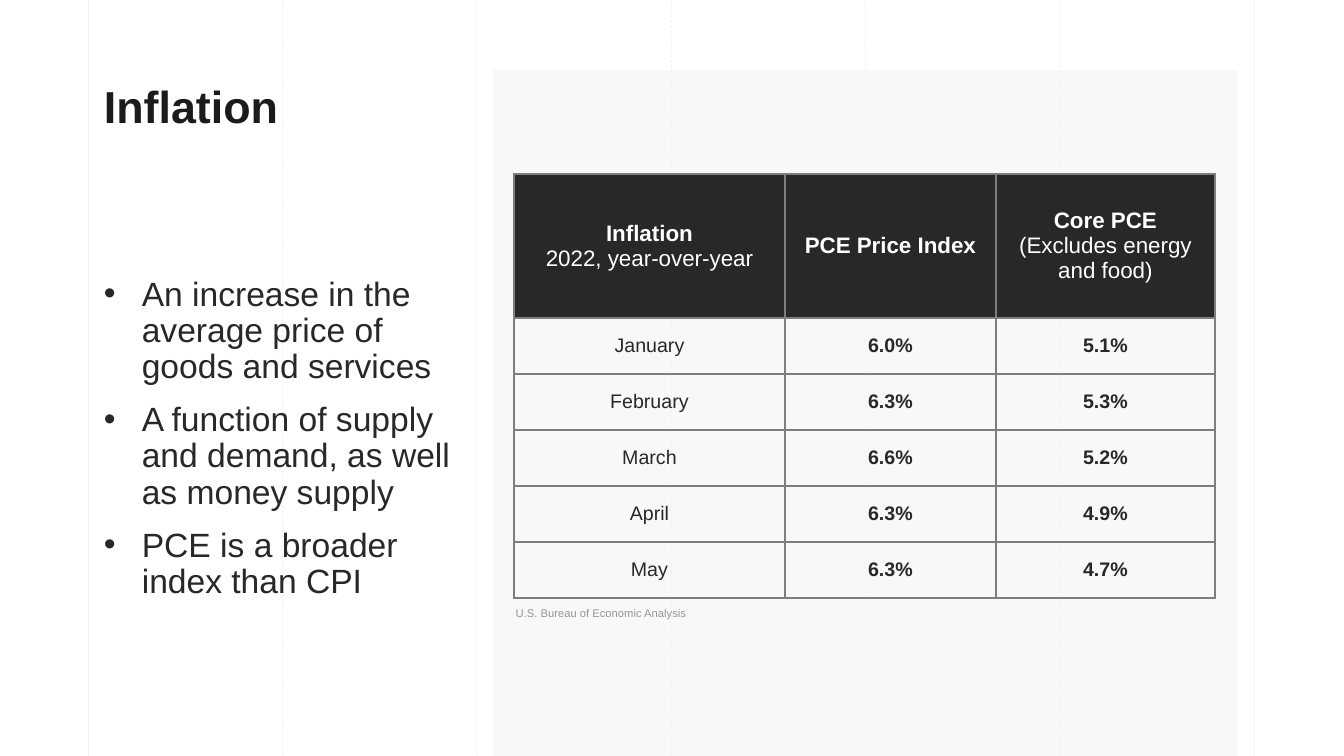
from lxml import etree
from pptx import Presentation, util as u
from pptx.dml.color import RGBColor
from pptx.enum import dml, shapes, text
from pptx.oxml import parse_xml
from pptx.oxml.ns import nsdecls, qn

PX = 914400 / 100.8
WIDTH, HEIGHT = 1344, 756
PALE = RGBColor(0xF2, 0xF2, 0xF2)
TITLE_INK = RGBColor(0x1C, 0x1B, 0x1C)
INK = RGBColor(0x28, 0x28, 0x28)
WHITE = RGBColor(0xFF, 0xFF, 0xFF)
BORDER = RGBColor(0x7E, 0x7E, 0x7E)
SOURCE_GREY = RGBColor(0x96, 0x96, 0x96)


def px(*lengths):
    """Turn pixel lengths into EMU."""
    return [u.Emu(round(length * PX)) for length in lengths]


def add_text(box, lines, size, color, bold=False):
    """Add a text box without insets, one paragraph per line."""
    frame = slide.shapes.add_textbox(*px(*box)).text_frame
    frame.word_wrap = True
    frame.margin_left = frame.margin_right = frame.margin_top = frame.margin_bottom = 0
    frame.text = "\n".join(lines)
    for paragraph in frame.paragraphs:
        for run in paragraph.runs:
            run.font.name = "Arial"
            run.font.size = u.Pt(size)
            run.font.bold = bold
            run.font.color.rgb = color
    return frame


presentation = Presentation()
presentation.slide_width, presentation.slide_height = px(WIDTH, HEIGHT)
slide = presentation.slides.add_slide(presentation.slide_layouts[6])

# Vertical guides: solid at both ends, dashed between
for index in range(7):
    x = 88 + index * 1166 // 6
    guide = slide.shapes.add_connector(shapes.MSO_CONNECTOR.STRAIGHT, *px(x, 0, x, HEIGHT))
    guide.line.color.rgb = PALE
    guide.line.width = u.Pt(0.5)
    if 0 < index < 6:
        guide.line.dash_style = dml.MSO_LINE.DASH
    etree.SubElement(guide._element.spPr, qn("a:effectLst"))

# Half-transparent panel behind the table
panel = slide.shapes.add_shape(shapes.MSO_SHAPE.RECTANGLE, *px(493, 70, 745, 686))
panel.shadow.inherit = False
panel.fill.solid()
panel.fill.fore_color.rgb = PALE
panel.line.fill.background()
panel_color = panel._element.spPr.find(qn("a:solidFill"))[0]
etree.SubElement(panel_color, qn("a:alpha"), val="50000")

title = add_text((104, 89, 357, 129), ["Inflation"], 32, TITLE_INK, bold=True)
title.paragraphs[0].line_spacing = 0.8

bullets = add_text((104, 277, 357, 374), [
    "An increase in the average price of goods and services",
    "A function of supply and demand, as well as money supply",
    "PCE is a broader index than CPI",
], 24, INK)
for paragraph in bullets.paragraphs:
    paragraph.line_spacing = 0.9
    paragraph.space_after = u.Pt(12)
    properties = paragraph._p.get_or_add_pPr()
    properties.set("marL", "342900")
    properties.set("indent", "-342900")
    properties.append(parse_xml(f'<a:buFont {nsdecls("a")} typeface="Arial"/>'))
    properties.append(parse_xml(f'<a:buChar {nsdecls("a")} char="•"/>'))

# Price table: \v is a line break within a header, \n a new paragraph
rows = [
    ("Inflation\v2022, year-over-year", "PCE Price Index", "Core PCE\n(Excludes energy and food)"),
    ("January", "6.0%", "5.1%"),
    ("February", "6.3%", "5.3%"),
    ("March", "6.6%", "5.2%"),
    ("April", "6.3%", "4.9%"),
    ("May", "6.3%", "4.7%"),
]
column_widths = px(271, 211, 219)
row_heights = px(144, *[56] * 5)
table = slide.shapes.add_table(
    len(rows), 3, *px(514, 174), sum(column_widths), sum(row_heights)).table
for column, width in zip(table.columns, column_widths):
    column.width = width
for row_index, values in enumerate(rows):
    table.rows[row_index].height = row_heights[row_index]
    header = row_index == 0
    for column_index, value in enumerate(values):
        cell = table.cell(row_index, column_index)
        cell.vertical_anchor = text.MSO_ANCHOR.MIDDLE
        cell.margin_left, cell.margin_right = px(15, 15)
        cell.margin_top, cell.margin_bottom = px(11, 11)
        if header:
            cell.fill.solid()
            cell.fill.fore_color.rgb = INK
        else:
            cell.fill.background()
        cell.text_frame.text = value
        for paragraph in cell.text_frame.paragraphs:
            paragraph.alignment = text.PP_ALIGN.CENTER
        runs = [run for paragraph in cell.text_frame.paragraphs for run in paragraph.runs]
        for run_index, run in enumerate(runs):
            run.font.name = "Arial"
            run.font.size = u.Pt(16 if header else 14)
            run.font.bold = run_index == 0 if header else column_index > 0
            run.font.color.rgb = WHITE if header else INK
        for position, side in enumerate(("lnL", "lnR", "lnT", "lnB")):
            cell._tc.get_or_add_tcPr().insert(position, parse_xml(
                f'<a:{side} {nsdecls("a")} w="12700"><a:solidFill>'
                f'<a:srgbClr val="{BORDER}"/></a:solidFill></a:{side}>'))

source = add_text((508, 606, 186, 13), ["U.S. Bureau of Economic Analysis"], 8, SOURCE_GREY)
source.paragraphs[0].alignment = text.PP_ALIGN.CENTER

presentation.save("out.pptx")
